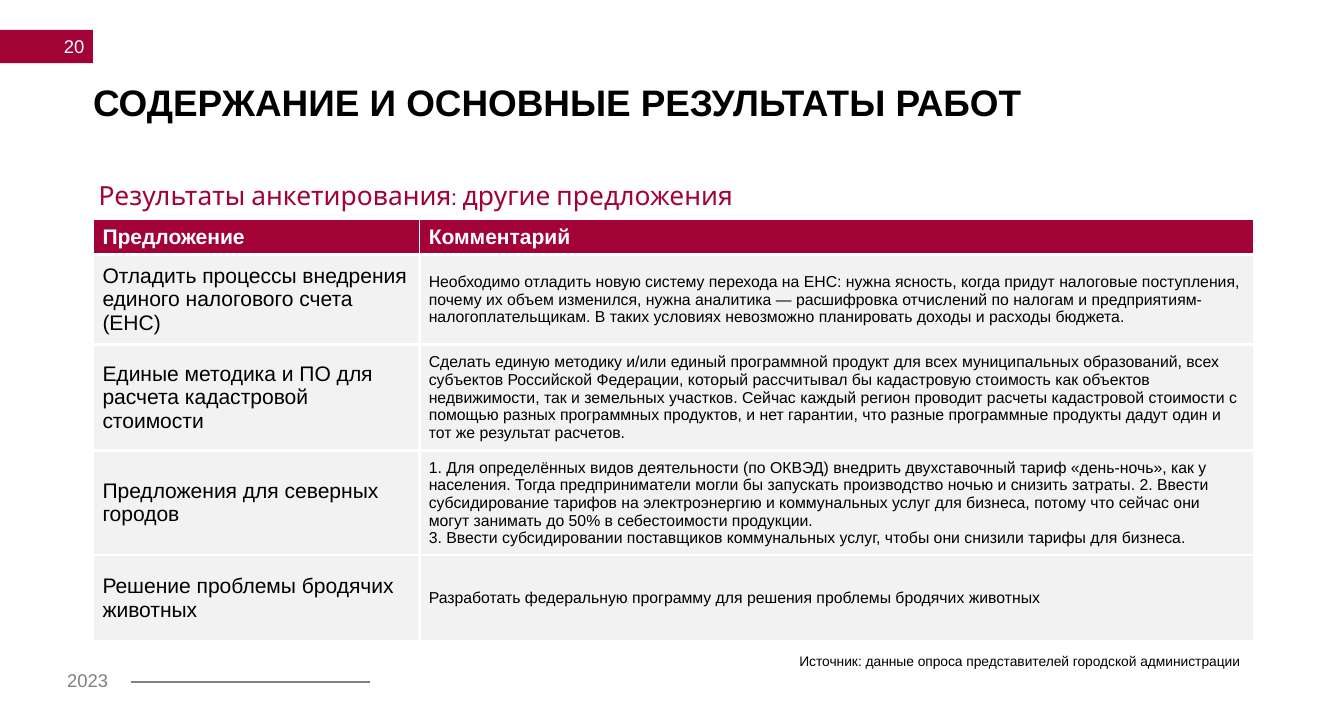
from lxml.etree import SubElement
from pptx import Presentation
from pptx.dml.color import RGBColor
from pptx.enum.shapes import MSO_CONNECTOR, MSO_SHAPE
from pptx.enum.text import MSO_ANCHOR, MSO_AUTO_SIZE, PP_ALIGN
from pptx.oxml import parse_xml
from pptx.oxml.ns import nsdecls, qn
from pptx.util import Pt

CRIMSON = RGBColor(0xA3, 0x02, 0x36)
GRAY = RGBColor(0x80, 0x80, 0x80)
PALE = RGBColor(0xF2, 0xF2, 0xF2)
BLACK = RGBColor(0, 0, 0)
WHITE = RGBColor(0xFF, 0xFF, 0xFF)

HEADERS = ("Предложение", "Комментарий")
PROPOSALS = [
    ("Отладить процессы внедрения единого налогового счета (ЕНС)",
     ["Необходимо отладить новую систему перехода на ЕНС: нужна ясность, когда придут "
      "налоговые поступления, почему их объем изменился, нужна аналитика — расшифровка "
      "отчислений по налогам и предприятиям-налогоплательщикам. В таких условиях "
      "невозможно планировать доходы и расходы бюджета."]),
    ("Единые методика и ПО для расчета кадастровой стоимости",
     ["Сделать единую методику и/или единый программной продукт для всех муниципальных "
      "образований, всех субъектов Российской Федерации, который рассчитывал бы "
      "кадастровую стоимость как объектов недвижимости, так и земельных участков. Сейчас "
      "каждый регион проводит расчеты кадастровой стоимости с помощью разных программных "
      "продуктов, и нет гарантии, что разные программные продукты дадут один и тот же "
      "результат расчетов."]),
    ("Предложения для северных городов",
     ["1. Для определённых видов деятельности (по ОКВЭД) внедрить двухставочный тариф "
      "«день-ночь», как у населения. Тогда предприниматели могли бы запускать производство "
      "ночью и снизить затраты. 2. Ввести субсидирование тарифов на электроэнергию и "
      "коммунальных услуг для бизнеса, потому что сейчас они могут занимать до 50% в "
      "себестоимости продукции.",
      "3. Ввести субсидировании поставщиков коммунальных услуг, чтобы они снизили тарифы "
      "для бизнеса."]),
    ("Решение проблемы бродячих животных",
     ["Разработать федеральную программу для решения проблемы бродячих животных"]),
]
COLUMN_WIDTHS = (247.7, 633.6)
ROW_HEIGHTS = (24.5, 68.4, 80.6, 77.8, 65.5)
ROW_RULES = (1, 3, 2.25, 2.25, 2.25, 2.25)


class SlideBuilder:
    def __init__(self, presentation, font="Arial"):
        self.slide = presentation.slides.add_slide(presentation.slide_layouts[5])
        self.font = font

    def add_paragraphs(self, frame, paragraphs, size, color, bold=False,
                       align=PP_ALIGN.LEFT, font=None):
        for index, text in enumerate(paragraphs):
            paragraph = frame.paragraphs[0] if index == 0 else frame.add_paragraph()
            paragraph.alignment = align
            run = paragraph.add_run()
            run.text = text
            run.font.name = font or self.font
            run.font.size = Pt(size)
            run.font.bold = bold
            run.font.color.rgb = color

    def title(self, text, left, top, width, height):
        shape = self.slide.shapes.title
        shape.left, shape.top, shape.width, shape.height = map(Pt, (left, top, width, height))
        frame = shape.text_frame
        frame.margin_left = frame.margin_top = frame.margin_right = frame.margin_bottom = 0
        frame.auto_size = MSO_AUTO_SIZE.NONE
        frame.vertical_anchor = MSO_ANCHOR.MIDDLE
        self.add_paragraphs(frame, [text], 28, BLACK, bold=True)
        frame.paragraphs[0].line_spacing = 0.9
        frame.paragraphs[0].space_before = Pt(0)

    def text(self, text, left, top, width, height, size, color,
             anchor=MSO_ANCHOR.TOP, **style):
        box = self.slide.shapes.add_textbox(*map(Pt, (left, top, width, height)))
        frame = box.text_frame
        frame.word_wrap = True
        frame.vertical_anchor = anchor
        self.add_paragraphs(frame, [text], size, color, **style)

    def rectangle(self, left, top, width, height, color):
        shape = self.slide.shapes.add_shape(
            MSO_SHAPE.RECTANGLE, *map(Pt, (left, top, width, height)))
        shape.shadow.inherit = False
        shape.fill.solid()
        shape.fill.fore_color.rgb = color
        shape.line.fill.background()

    def horizontal_line(self, left, right, y, color, width):
        line = self.slide.shapes.add_connector(
            MSO_CONNECTOR.STRAIGHT, Pt(left), Pt(y), Pt(right), Pt(y))
        line.line.color.rgb = color
        line.line.width = Pt(width)
        SubElement(line._element.spPr, qn("a:effectLst"))

    def cell(self, cell, paragraphs, size, color, fill, borders, bold=False):
        """Fill one cell; borders are widths for left, right, top and bottom."""
        cell.vertical_anchor = MSO_ANCHOR.MIDDLE
        self.add_paragraphs(cell.text_frame, paragraphs, size, color, bold)
        cell.fill.solid()
        cell.fill.fore_color.rgb = fill
        properties = cell._tc.get_or_add_tcPr()
        for index, (side, width) in enumerate(zip("LRTB", borders)):
            properties.insert(index, parse_xml(
                f'<a:ln{side} {nsdecls("a")} w="{Pt(width)}"><a:solidFill>'
                f'<a:srgbClr val="{WHITE}"/></a:solidFill></a:ln{side}>'))

    def proposal_table(self, left, top):
        table = self.slide.shapes.add_table(
            len(ROW_HEIGHTS), len(COLUMN_WIDTHS), Pt(left), Pt(top),
            Pt(sum(COLUMN_WIDTHS)), Pt(sum(ROW_HEIGHTS))).table
        table.horz_banding = False
        for column, width in zip(table.columns, COLUMN_WIDTHS):
            column.width = Pt(width)
        for row, height in zip(table.rows, ROW_HEIGHTS):
            row.height = Pt(height)
        for column, header in enumerate(HEADERS):
            self.cell(table.cell(0, column), [header], 16, WHITE, CRIMSON,
                      (1, 1, *ROW_RULES[:2]), bold=True)
        for row, (proposal, comments) in enumerate(PROPOSALS, start=1):
            rules = ROW_RULES[row:row + 2]
            self.cell(table.cell(row, 0), [proposal], 16, BLACK, PALE, (1, 2.25, *rules))
            self.cell(table.cell(row, 1), comments, 12, BLACK, PALE, (2.25, 1, *rules))


def main():
    presentation = Presentation()
    presentation.slide_width = Pt(1020.24)
    presentation.slide_height = Pt(538.56)
    builder = SlideBuilder(presentation)
    builder.rectangle(0, 22.7, 70.6, 25.2, CRIMSON)
    builder.text("20", 13, 20.9, 58.2, 28.8, 14, WHITE,
                 anchor=MSO_ANCHOR.MIDDLE, align=PP_ALIGN.RIGHT)
    builder.title("СОДЕРЖАНИЕ И ОСНОВНЫЕ РЕЗУЛЬТАТЫ РАБОТ", 70.6, 65.5, 831.6, 28.1)
    builder.text("Результаты анкетирования: другие предложения",
                 67.7, 132.5, 843.1, 31.7, 20, CRIMSON, font="Cabin")
    builder.proposal_table(70.6, 167)
    builder.text("Источник: данные опроса представителей городской администрации",
                 522.7, 492.5, 426.2, 20.9, 10.5, BLACK, align=PP_ALIGN.RIGHT)
    builder.text("2023", 43.9, 504.7, 48.2, 24.5, 14, GRAY)
    builder.horizontal_line(99.4, 280.8, 517.7, GRAY, 1.5)
    presentation.save("out.pptx")


if __name__ == "__main__":
    main()
